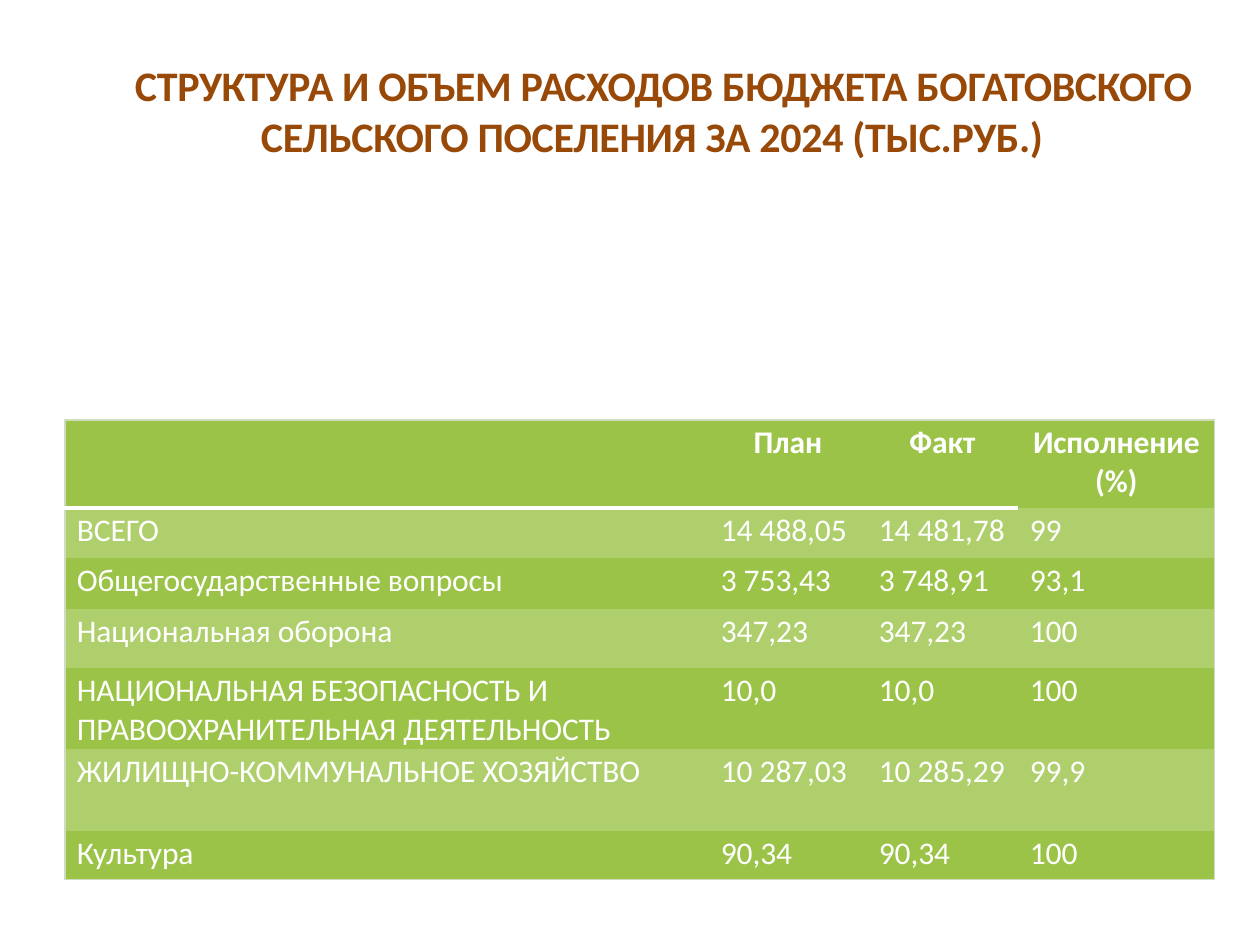
from lxml import etree
from pptx import Presentation
from pptx import util as u
from pptx.dml.color import RGBColor
from pptx.enum import text
from pptx.oxml.ns import qn

PX = 914400 // 126
COLORS = {"title": "984807", "text": "FFFFFF", "dark": "9BC348", "light": "AFCF6D",
          "frame": "D0DCBF", "rule": "FFFFFF"}
NO_STYLE = "{2D5ABB26-0587-4C30-8999-92F81FD0307C}"


def style_font(paragraph, size, color, bold, spacing):
    """Format every run; spacing is in hundredths of a point."""
    for run in paragraph.runs:
        run.font.name = "Calibri"
        run.font.size = u.Pt(size)
        run.font.bold = bold
        run.font.color.rgb = RGBColor.from_string(COLORS[color])
        run.font._element.set("spc", str(spacing))


def add_border(cell, side, color, points):
    """Draw one cell side (L, R, T, B); call in that order, before the fill is set."""
    line = etree.SubElement(cell._tc.get_or_add_tcPr(), qn(f"a:ln{side}"), w=str(u.Pt(points)))
    fill = etree.SubElement(line, qn("a:solidFill"))
    etree.SubElement(fill, qn("a:srgbClr"), val=COLORS[color])


prs = Presentation()
prs.slide_width, prs.slide_height = 1260 * PX, 945 * PX
slide = prs.slides.add_slide(prs.slide_layouts[6])

# Table of expenses
expenses = [
    ("", "План", "Факт", "Исполнение\n(%)"),
    ("ВСЕГО", "14 488,05", "14 481,78", "99"),
    ("Общегосударственные вопросы", "3 753,43", "3 748,91", "93,1"),
    ("Национальная оборона", "347,23", "347,23", "100"),
    ("НАЦИОНАЛЬНАЯ БЕЗОПАСНОСТЬ И ПРАВООХРАНИТЕЛЬНАЯ ДЕЯТЕЛЬНОСТЬ", "10,0", "10,0", "100"),
    ("ЖИЛИЩНО-КОММУНАЛЬНОЕ ХОЗЯЙСТВО", "10 287,03", "10 285,29", "99,9"),
    ("Культура", "90,34", "90,34", "100"),
]
col_widths = [644, 158, 151, 197]
row_heights = [88, 50, 51, 59, 81, 82, 49]
last_row, last_col = len(row_heights) - 1, len(col_widths) - 1

budget = slide.shapes.add_table(len(row_heights), len(col_widths), 65 * PX, 420 * PX,
                                sum(col_widths) * PX, sum(row_heights) * PX).table
budget.horz_banding = False
budget._tbl.tblPr.find(qn("a:tableStyleId")).text = NO_STYLE
for column, width in zip(budget.columns, col_widths):
    column.width = width * PX
for row, height in zip(budget.rows, row_heights):
    row.height = height * PX

for r, values in enumerate(expenses):
    is_header = r == 0
    for c, value in enumerate(values):
        cell = budget.cell(r, c)
        cell.margin_left = 0 if is_header else 12 * PX
        cell.margin_right = cell.margin_bottom = 0
        cell.margin_top = 4 * PX
        cell.text_frame.text = value
        for paragraph in cell.text_frame.paragraphs:
            if is_header:
                paragraph.alignment = text.PP_ALIGN.CENTER
            style_font(paragraph, 18, "text", is_header, -5)

        if c == 0:
            add_border(cell, "L", "frame", 0.75)
        if c == last_col:
            add_border(cell, "R", "frame", 0.75)
        if is_header:
            add_border(cell, "T", "frame", 0.75)
        if is_header and c < last_col:
            add_border(cell, "B", "rule", 3)
        elif r == last_row:
            add_border(cell, "B", "frame", 0.75)
        cell.fill.solid()
        band = "light" if r % 2 else "dark"
        cell.fill.fore_color.rgb = RGBColor.from_string(COLORS[band])

# Title with a hanging second line
heading = slide.shapes.add_textbox(101 * PX, 32 * PX, 1114 * PX, 130 * PX).text_frame
heading.word_wrap = True
heading.margin_left = heading.margin_right = heading.margin_bottom = 0
heading.margin_top = 28 * PX
heading.text = "СТРУКТУРА И ОБЪЕМ РАСХОДОВ БЮДЖЕТА БОГАТОВСКОГО СЕЛЬСКОГО ПОСЕЛЕНИЯ ЗА 2024 (ТЫС.РУБ.)"
title_line = heading.paragraphs[0]
indents = title_line._p.get_or_add_pPr()
indents.set("marL", str(160 * PX))
indents.set("indent", str(-126 * PX))
style_font(title_line, 24, "title", True, -20)

prs.save("out.pptx")
